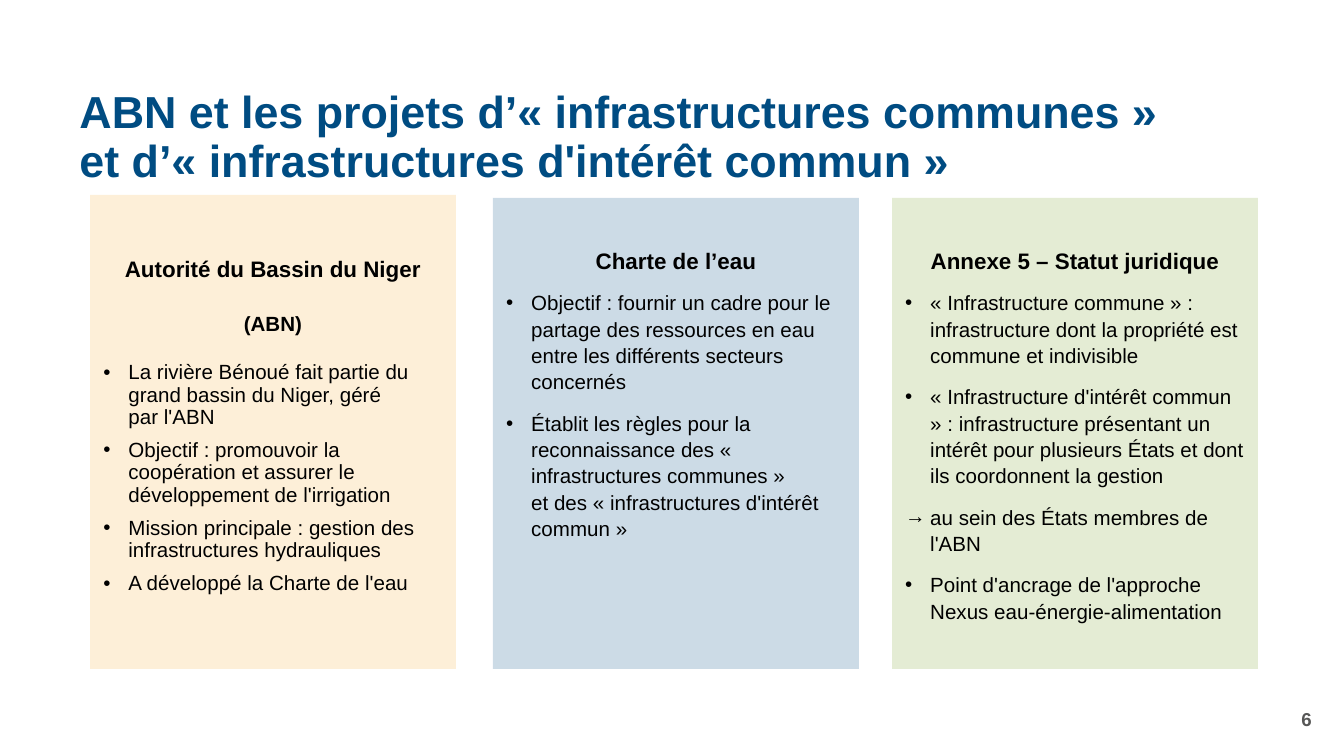
import pptx
import pptx.dml.color
import pptx.enum.shapes
import pptx.enum.text
import pptx.util
from lxml import etree
from pptx.oxml.ns import qn

PX = 914400 / 134.4
NAVY = pptx.dml.color.RGBColor(0x00, 0x4C, 0x82)
ORANGE = pptx.dml.color.RGBColor(0xF6, 0xB3, 0x3C)
GREEN = pptx.dml.color.RGBColor(0x79, 0xA1, 0x2C)
GREY = pptx.dml.color.RGBColor(0x57, 0x57, 0x56)
BLACK = pptx.dml.color.RGBColor(0, 0, 0)
Pt = pptx.util.Pt
ALIGN = pptx.enum.text.PP_ALIGN
ANCHOR = pptx.enum.text.MSO_ANCHOR


def px(value):
    return pptx.util.Emu(round(value * PX))


def write(para, text, size, color, bold, align, spacing=1.0, before=0, after=0, bullet=None):
    """Format a paragraph and add its text, one run for each line."""
    properties = para._p.get_or_add_pPr()
    properties.set("marL", str(px(25) if bullet else 0))
    properties.set("indent", str(px(-25) if bullet else 0))
    if bullet:
        etree.SubElement(properties, qn("a:buFont"), typeface="Arial")
        etree.SubElement(properties, qn("a:buChar"), char=bullet)
    else:
        etree.SubElement(properties, qn("a:buNone"))
    para.alignment = align
    para.line_spacing = spacing
    para.space_before = Pt(before)
    para.space_after = Pt(after)
    for number, line in enumerate(text.split("\n")):
        if number:
            para.add_line_break()
        span = para.add_run()
        span.text = line
        span.font.name = "Arial"
        span.font.size = Pt(size)
        span.font.bold = bold
        span.font.color.rgb = color


deck = pptx.Presentation()
deck.slide_width, deck.slide_height = px(1344), px(756)
page = deck.slides.add_slide(deck.slide_layouts[1])

title = page.shapes.title
title.left, title.top, title.width, title.height = px(66), px(99), px(1259), px(79)
title.text_frame.auto_size = pptx.enum.text.MSO_AUTO_SIZE.NONE
title.text_frame.vertical_anchor = ANCHOR.MIDDLE
write(title.text_frame.paragraphs[0],
      "ABN et les projets d’« infrastructures communes »\net d’« infrastructures d'intérêt commun »",
      24, NAVY, True, ALIGN.LEFT, spacing=0.9)

number_box = page.shapes.add_textbox(px(1023), px(699), px(302), px(40))
number_box.text_frame.word_wrap = True
number_box.text_frame.vertical_anchor = ANCHOR.MIDDLE
write(number_box.text_frame.paragraphs[0], "6", 10, GREY, True, ALIGN.RIGHT)

# Left, top, fill, top inset, headings, bullet (line spacing, before, after), items
CARD_WIDTH, CARD_BOTTOM = 366, 669
CARDS = [
    (90, 195, ORANGE, 58, ["Autorité du Bassin du Niger", "(ABN)"], (0.9, 6, 0), [
        ("•", "La rivière Bénoué fait partie du grand bassin du Niger, géré\npar l'ABN"),
        ("•", "Objectif : promouvoir la coopération et assurer le développement de l'irrigation"),
        ("•", "Mission principale : gestion des infrastructures hydrauliques"),
        ("•", "A développé la Charte de l'eau"),
    ]),
    (493, 198, NAVY, 47, ["Charte de l’eau"], (1.07, 0, 8), [
        ("•", "Objectif : fournir un cadre pour le partage des ressources en eau "
              "entre les différents secteurs concernés"),
        ("•", "Établit les règles pour la reconnaissance des « infrastructures communes »\n"
              "et des « infrastructures d'intérêt commun »"),
    ]),
    (892, 198, GREEN, 47, ["Annexe 5 – Statut juridique"], (1.07, 0, 8), [
        ("•", "« Infrastructure commune » : infrastructure dont la propriété est "
              "commune et indivisible"),
        ("•", "« Infrastructure d'intérêt commun » : infrastructure présentant un intérêt "
              "pour plusieurs États et dont ils coordonnent la gestion"),
        ("→", "au sein des États membres de l'ABN"),
        ("•", "Point d'ancrage de l'approche Nexus eau-énergie-alimentation"),
    ]),
]

for index, (left, top, color, inset, headings, (spacing, before, after), items) in enumerate(CARDS):
    if index == 0:
        card = page.placeholders[1]
        card.left, card.top = px(left), px(top)
        card.width, card.height = px(CARD_WIDTH), px(CARD_BOTTOM - top)
    else:
        card = page.shapes.add_shape(pptx.enum.shapes.MSO_SHAPE.RECTANGLE, px(left), px(top),
                                     px(CARD_WIDTH), px(CARD_BOTTOM - top))
        card.shadow.inherit = False
    card.fill.solid()
    card.fill.fore_color.rgb = color
    tint = card._element.spPr.find(qn("a:solidFill")).find(qn("a:srgbClr"))
    etree.SubElement(tint, qn("a:alpha"), val="20000")
    card.line.fill.background()

    frame = card.text_frame
    frame.word_wrap = True
    frame.auto_size = pptx.enum.text.MSO_AUTO_SIZE.NONE
    frame.vertical_anchor = ANCHOR.TOP
    frame.margin_top = px(inset)
    for row, heading in enumerate(headings):
        para = frame.add_paragraph() if row else frame.paragraphs[0]
        write(para, heading, 11 if row else 12, BLACK, True, ALIGN.CENTER,
              spacing=1.07, before=7 if row else 0, after=8)
    for bullet, text in items:
        write(frame.add_paragraph(), text, 11, BLACK, False, ALIGN.LEFT,
              spacing, before, after, bullet)

deck.save("out.pptx")
